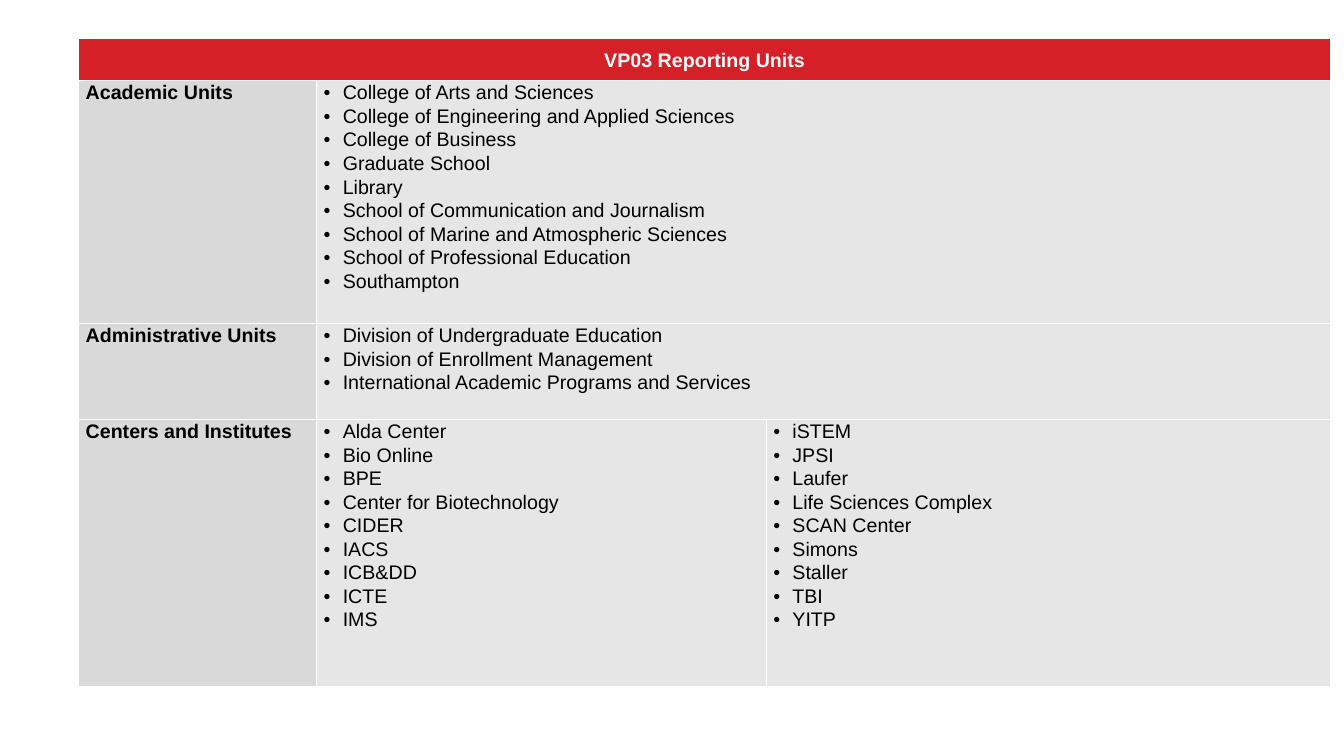
import pptx
import pptx.util
import pptx.dml.color
import pptx.enum.text
import pptx.oxml
import pptx.oxml.ns
from pptx.util import Inches

COLORS = {"header": "D52027", "label": "D9D9D9", "body": "E7E6E6",
          "white": "FFFFFF", "black": "000000"}
FONT = {"name": "Arial", "size": pptx.util.Pt(14)}
MARGINS = {"margin_left": Inches(0.07), "margin_right": Inches(0.07),
           "margin_top": 0, "margin_bottom": 0}
COL_WIDTHS = [2.36, 4.46, 5.6]
ROW_HEIGHTS = [0.42, 2.41, 0.95, 2.65]
TITLE = "VP03 Reporting Units"
UNITS = [
    ("Academic Units", [[
        "College of Arts and Sciences",
        "College of Engineering and Applied Sciences",
        "College of Business",
        "Graduate School",
        "Library",
        "School of Communication and Journalism",
        "School of Marine and Atmospheric Sciences",
        "School of Professional Education",
        "Southampton"]]),
    ("Administrative Units", [[
        "Division of Undergraduate Education",
        "Division of Enrollment Management",
        "International Academic Programs and Services"]]),
    ("Centers and Institutes", [
        ["Alda Center", "Bio Online", "BPE", "Center for Biotechnology",
         "CIDER", "IACS", "ICB&DD", "ICTE", "IMS"],
        ["iSTEM", "JPSI", "Laufer", "Life Sciences Complex", "SCAN Center",
         "Simons", "Staller", "TBI", "YITP"]]),
]


def rgb(name):
    return pptx.dml.color.RGBColor.from_string(COLORS[name])


def set_all(obj, values):
    for name, value in values.items():
        setattr(obj, name, value)


def format_cell(cell, fill):
    """Set margins, fill and thin white borders."""
    set_all(cell, MARGINS)
    cell.fill.solid()
    cell.fill.fore_color.rgb = rgb(fill)
    tc_pr = cell._tc.get_or_add_tcPr()
    for i, side in enumerate(["lnL", "lnR", "lnT", "lnB"]):
        tc_pr.insert(i, pptx.oxml.parse_xml(
            f'<a:{side} {pptx.oxml.ns.nsdecls("a")} w="12700"><a:solidFill>'
            f'<a:srgbClr val="{COLORS["white"]}"/></a:solidFill></a:{side}>'))


def add_bullet(p):
    p_pr = p._p.get_or_add_pPr()
    p_pr.set("marL", str(Inches(0.19)))
    p_pr.set("indent", str(-Inches(0.19)))
    for xml in ('buFont {} typeface="Arial"', 'buChar {} char="•"'):
        p_pr.append(pptx.oxml.parse_xml(
            f'<a:{xml.format(pptx.oxml.ns.nsdecls("a"))}/>'))


def write_cell(cell, lines, color="black", bold=False, bullets=False):
    tf = cell.text_frame
    for i, line in enumerate(lines):
        p = tf.add_paragraph() if i else tf.paragraphs[0]
        p.line_spacing = 1.07
        if bullets:
            add_bullet(p)
        r = p.add_run()
        r.text = line
        set_all(r.font, {**FONT, "bold": bold})
        r.font.color.rgb = rgb(color)


def add_units_table(slide, left, top):
    frame = slide.shapes.add_table(
        len(ROW_HEIGHTS), len(COL_WIDTHS), Inches(left), Inches(top),
        Inches(sum(COL_WIDTHS)), Inches(sum(ROW_HEIGHTS)))
    table = frame.table
    for col, width in zip(table.columns, COL_WIDTHS):
        col.width = Inches(width)
    for row, height in zip(table.rows, ROW_HEIGHTS):
        row.height = Inches(height)
    for i, row in enumerate(table.rows):
        for j, cell in enumerate(row.cells):
            format_cell(cell, "body" if i and j else "label" if i else "header")

    header = table.cell(0, 0)
    header.merge(table.cell(0, 2))
    header.vertical_anchor = pptx.enum.text.MSO_ANCHOR.MIDDLE
    write_cell(header, [TITLE], color="white", bold=True)
    header.text_frame.paragraphs[0].alignment = pptx.enum.text.PP_ALIGN.CENTER

    for i, (label, lists) in enumerate(UNITS, start=1):
        write_cell(table.cell(i, 0), [label], bold=True)
        if len(lists) == 1:
            table.cell(i, 1).merge(table.cell(i, 2))
        for j, names in enumerate(lists, start=1):
            write_cell(table.cell(i, j), names, bullets=True)


def main():
    prs = pptx.Presentation()
    prs.slide_width, prs.slide_height = Inches(13.33), Inches(7.5)
    slide = prs.slides.add_slide(prs.slide_layouts[6])
    add_units_table(slide, 0.78, 0.38)
    prs.save("out.pptx")


if __name__ == "__main__":
    main()
